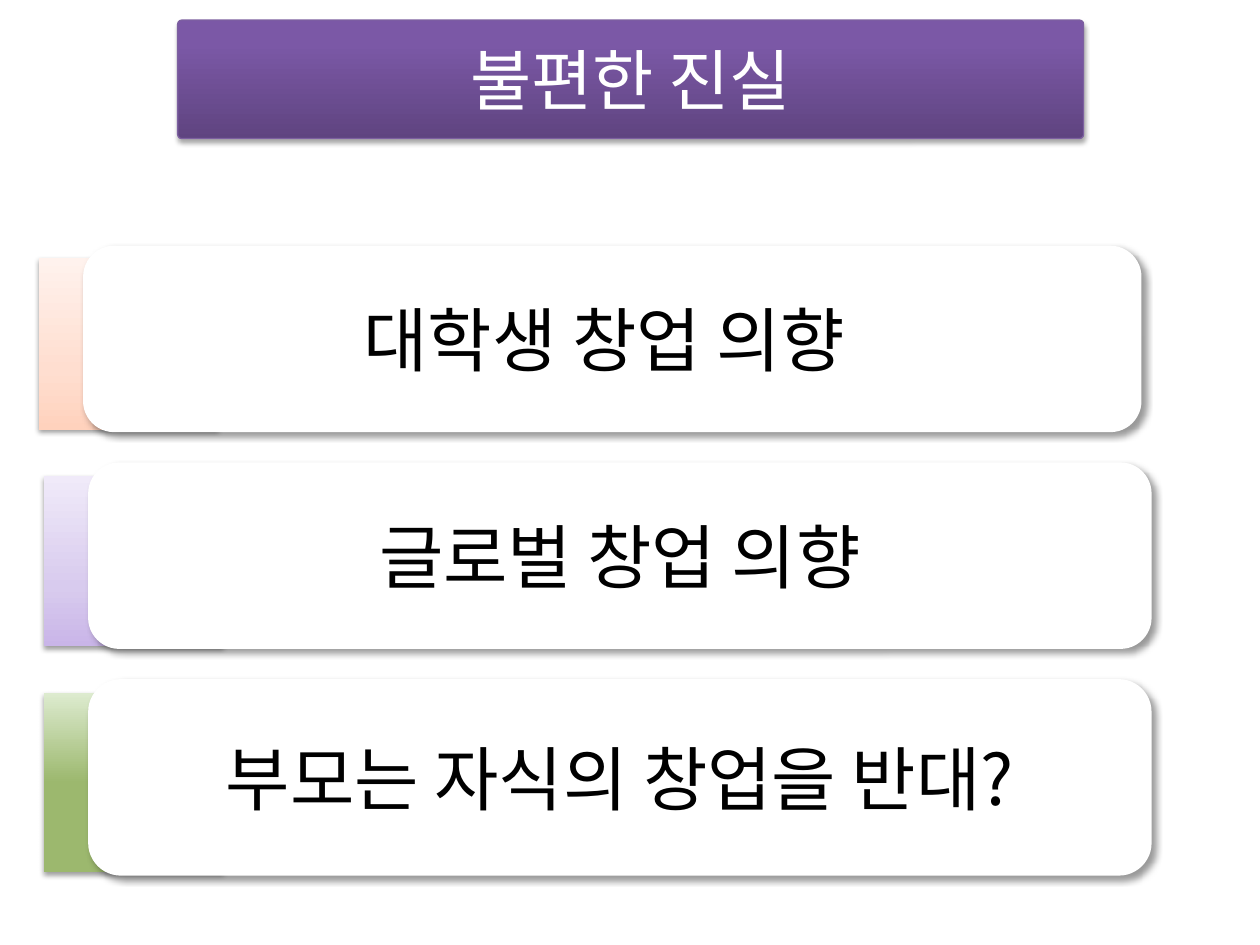
"""Build the slide: a title bar above three tabbed cards."""
from lxml.etree import SubElement
from pptx import Presentation
from pptx.dml.color import RGBColor
from pptx.enum.shapes import MSO_SHAPE as SHAPE
from pptx.enum.text import MSO_ANCHOR as ANCHOR, PP_ALIGN as ALIGN
from pptx.oxml.ns import qn
from pptx.util import Inches, Pt

FONT = "Noto Sans CJK KR"
WHITE = RGBColor(0xFF, 0xFF, 0xFF)
BLACK = RGBColor(0, 0, 0)
TITLE_LINE = RGBColor(0x7D, 0x60, 0xA0)

TITLE = "불편한 진실"
TITLE_STOPS = [(0, "5F4480"), (80, "7B58A6"), (100, "7C57A8")]
TITLE_SHADOW = (35, 3.1, 1.8, 90)
TAB_SHADOW = (38, 3.1, 1.6, 90)
CARD_SHADOW = (40, 4, 3, 45)
TAB_WIDTH, TAB_OVERHANG = 1.42, 0.35

CARDS = [
    {"text": "대학생 창업 의향 ", "box": (0.66, 1.95, 8.4, 1.48), "tab": (2.05, 1.36),
     "stops": [(0, "FFD2BD"), (35, "FFDED0"), (100, "FFF2ED")]},
    {"text": "글로벌 창업 의향", "box": (0.7, 3.67, 8.44, 1.48), "tab": (3.78, 1.35),
     "stops": [(0, "C9B5E8"), (35, "D8CBEE"), (100, "F0EAF9")]},
    {"text": "부모는 자식의 창업을 반대?", "box": (0.7, 5.39, 8.44, 1.56), "tab": (5.5, 1.42),
     "stops": [(50, "9CB86E"), (100, "DDEBCF"), (100, "156B13")]},
]


def add_color(parent, color):
    return SubElement(parent, qn("a:srgbClr"), val=color)


def add_box(shapes, box, shadow, adj=None):
    sp = shapes.add_shape(SHAPE.ROUNDED_RECTANGLE, *map(Inches, box))
    if adj is not None:
        sp.adjustments[0] = adj
    sp.line.fill.background()
    sp.shadow.inherit = False
    alpha, blur, dist, angle = shadow
    outer = SubElement(sp._element.spPr.find(qn("a:effectLst")), qn("a:outerShdw"),
                       blurRad=str(Pt(blur)), dist=str(Pt(dist)),
                       dir=str(angle * 60000), rotWithShape="0")
    SubElement(add_color(outer, "000000"), qn("a:alpha"), val=str(alpha * 1000))
    return sp


def fill_upward(sp, stops):
    sp.fill.gradient()
    sp.fill.gradient_angle = 90
    stop_list = sp._element.spPr.find(".//" + qn("a:gsLst"))
    for old in list(stop_list):
        stop_list.remove(old)
    for pos, color in stops:
        add_color(SubElement(stop_list, qn("a:gs"), pos=str(pos * 1000)), color)


def write(sp, text, size, color):
    tf = sp.text_frame
    tf.word_wrap = True
    tf.vertical_anchor = ANCHOR.MIDDLE
    p = tf.paragraphs[0]
    p.text = text
    p.alignment = ALIGN.CENTER
    p.font.size = Pt(size)
    p.font.name = FONT
    p.font.color.rgb = color
    SubElement(p._p.pPr.find(qn("a:defRPr")), qn("a:ea"), typeface=FONT)
    return p


def add_title(s):
    sp = add_box(s.shapes, (1.41, 0.16, 7.19, 0.94), TITLE_SHADOW, 0.034)
    fill_upward(sp, TITLE_STOPS)
    sp.line.color.rgb = TITLE_LINE
    sp.line.width = Pt(0.75)
    p = write(sp, TITLE, 38, WHITE)
    p._p.pPr.set("marL", str(Inches(0.38)))
    p._p.pPr.set("indent", str(Inches(-0.38)))


def add_card(s, card):
    shapes = s.shapes.add_group_shape().shapes
    top, height = card["tab"]
    left = card["box"][0] - TAB_OVERHANG
    tab = add_box(shapes, (left, top, TAB_WIDTH, height), TAB_SHADOW, 0)
    fill_upward(tab, card["stops"])
    sp = add_box(shapes, card["box"], CARD_SHADOW)
    sp.fill.solid()
    sp.fill.fore_color.rgb = WHITE
    write(sp, card["text"], 40, BLACK)


def main():
    prs = Presentation()
    prs.slide_width, prs.slide_height = Inches(10), Inches(7.5)
    s = prs.slides.add_slide(prs.slide_layouts[6])
    add_title(s)
    for card in CARDS:
        add_card(s, card)
    prs.save("out.pptx")


if __name__ == "__main__":
    main()
